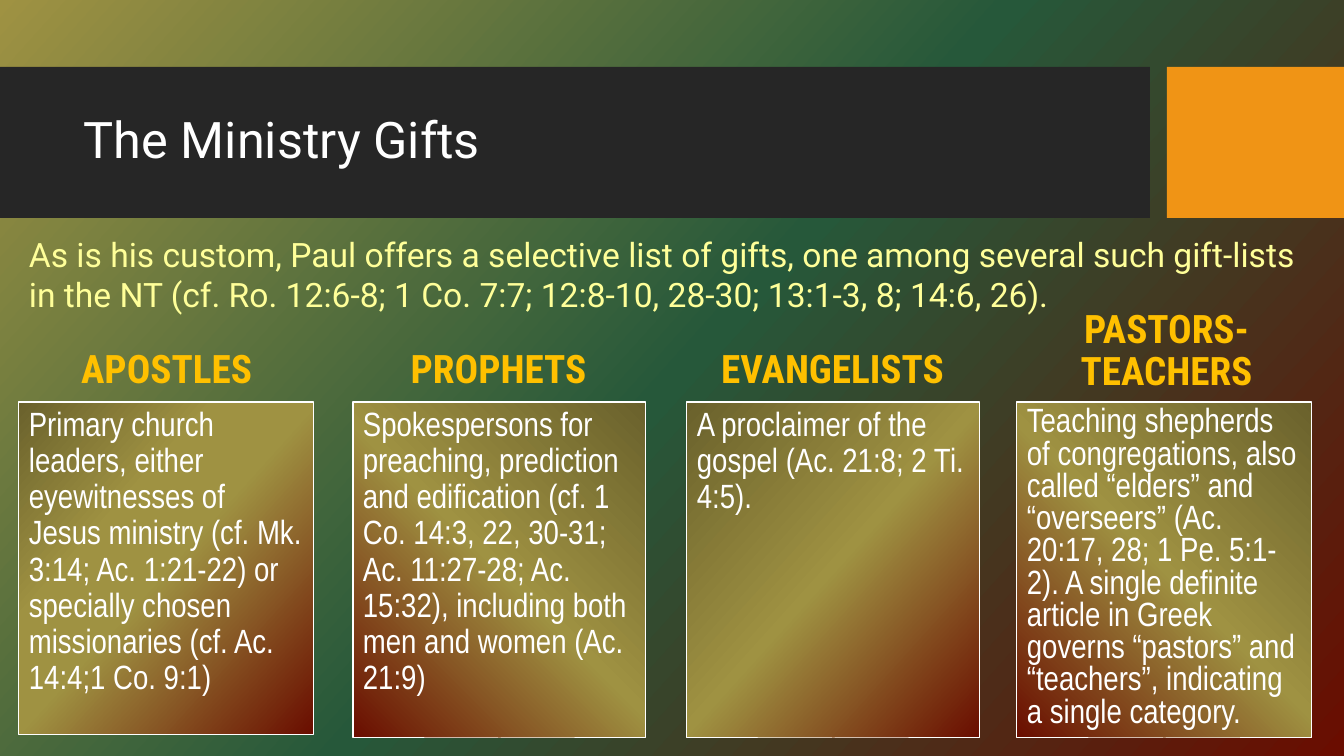
import lxml.etree
import pptx
import pptx.dml.color
import pptx.enum.shapes
import pptx.enum.text
import pptx.oxml.ns
import pptx.util

PX = 914400 / 100.8
COLORS = {
    "bar": "262626", "accent": "F09415", "white": "FFFFFF",
    "heading": "FFC000", "intro": "FFFF99",
    "olive": "6A612C", "gold": "9F9242", "green": "26583A", "red": "6A0D00",
}
BACKGROUND_STOPS = [(0, "gold"), (50, "green"), (100, "red")]
CARD_STOPS = [(0, "olive"), (50, "gold"), (100, "red")]
WIDE_GOLD_STOPS = [(0, "olive"), (33, "gold"), (50, "gold"), (100, "red")]
CARD_TOP = 402

# heading, heading left and top, card left, width and height, stops, angle, line spacing, text
GIFTS = [
    ("APOSTLES", 19, 328, 19, 295, 333, WIDE_GOLD_STOPS, 42, 0.9,
     "Primary church leaders, either eyewitnesses of Jesus ministry (cf. Mk. 3:14; "
     "Ac. 1:21-22) or specially chosen missionaries (cf. Ac. 14:4;1 Co. 9:1)"),
    ("PROPHETS", 351, 328, 353, 293, 336, CARD_STOPS, 135, 0.9,
     "Spokespersons for preaching, prediction and edification (cf. 1 Co. 14:3, 22, 30-31; "
     "Ac. 11:27-28; Ac. 15:32), including both men and women (Ac. 21:9)"),
    ("EVANGELISTS", 685, 328, 687, 293, 336, CARD_STOPS, 42, 0.9,
     "A proclaimer of the gospel (Ac. 21:8; 2 Ti. 4:5)."),
    ("PASTORS-TEACHERS", 1019, 330, 1017, 295, 336, CARD_STOPS, 135, 0.8,
     "Teaching shepherds of congregations, also called “elders” and “overseers” "
     "(Ac. 20:17, 28; 1 Pe. 5:1-2). A single definite article in Greek governs "
     "“pastors” and “teachers”, indicating a single category."),
]


def color(name):
    return pptx.dml.color.RGBColor.from_string(COLORS[name])


def box(*lengths):
    return [round(length * PX) for length in lengths]


class SlideBuilder:
    def __init__(self, slide):
        self.slide = slide

    def gradient(self, fill, owner, stops, angle):
        """Fill with any number of (percent, colour) stops, angle clockwise."""
        fill.gradient()
        fill.gradient_angle = 360 - angle
        qn = pptx.oxml.ns.qn
        stop_list = owner._element.find(".//" + qn("a:gsLst"))
        stop_list.clear()
        for percent, name in stops:
            stop = lxml.etree.SubElement(stop_list, qn("a:gs"), pos=str(percent * 1000))
            lxml.etree.SubElement(stop, qn("a:srgbClr"), val=COLORS[name])

    def background(self, stops, angle):
        self.gradient(self.slide.background.fill, self.slide, stops, angle)

    def rectangle(self, left, top, width, height, fill=None):
        shape = self.slide.shapes.add_shape(
            pptx.enum.shapes.MSO_SHAPE.RECTANGLE, *box(left, top, width, height))
        shape.shadow.inherit = False
        if fill:
            shape.fill.solid()
            shape.fill.fore_color.rgb = color(fill)
            shape.line.fill.background()
        return shape

    def set_text(self, shape, text, font, size, fill, anchor="TOP", align="LEFT",
                 spacing=0.9, bold=False):
        frame = shape.text_frame
        frame.text = text
        frame.word_wrap = True
        frame.vertical_anchor = pptx.enum.text.MSO_ANCHOR[anchor]
        paragraph = frame.paragraphs[0]
        paragraph.alignment = pptx.enum.text.PP_ALIGN[align]
        paragraph.line_spacing = spacing
        run_font = paragraph.runs[0].font
        run_font.name = font
        run_font.size = pptx.util.Pt(size)
        run_font.bold = bold
        run_font.color.rgb = color(fill)

    def text(self, left, top, width, height, text, font, size, fill, **style):
        shape = self.slide.shapes.add_textbox(*box(left, top, width, height))
        self.set_text(shape, text, font, size, fill, **style)
        return shape

    def card(self, left, top, width, height, stops, angle, text, spacing):
        shape = self.rectangle(left, top, width, height)
        self.gradient(shape.fill, shape, stops, angle)
        shape.line.color.rgb = color("white")
        shape.line.width = pptx.util.Pt(0.75)
        self.set_text(shape, text, "Arial Narrow", 24, "white", spacing=spacing)


def main():
    presentation = pptx.Presentation()
    presentation.slide_width, presentation.slide_height = box(1344, 756)
    builder = SlideBuilder(presentation.slides.add_slide(presentation.slide_layouts[6]))

    builder.background(BACKGROUND_STOPS, 42)
    builder.rectangle(0, 67, 1150, 151, "bar")
    builder.rectangle(1167, 67, 177, 151, "accent")
    builder.text(74, 83, 1061, 119, "The Ministry Gifts", "Roboto", 36, "white",
                 anchor="MIDDLE")

    for (heading, heading_left, heading_top, card_left, card_width, card_height,
         stops, angle, spacing, text) in GIFTS:
        builder.text(heading_left, heading_top, 295, 69, heading, "Roboto Condensed", 28,
                     "heading", anchor="BOTTOM", align="CENTER", bold=True)
        builder.card(card_left, CARD_TOP, card_width, card_height, stops, angle, text,
                     spacing)

    intro = builder.text(
        19, 229, 1295, 92,
        "As is his custom, Paul offers a selective list of gifts, one among several such "
        "gift-lists in the NT (cf. Ro. 12:6-8; 1 Co. 7:7; 12:8-10, 28-30; 13:1-3, 8; "
        "14:6, 26).", "Roboto", 24, "intro", spacing=1.0)
    intro.text_frame.auto_size = pptx.enum.text.MSO_AUTO_SIZE.SHAPE_TO_FIT_TEXT

    presentation.save("out.pptx")


if __name__ == "__main__":
    main()
